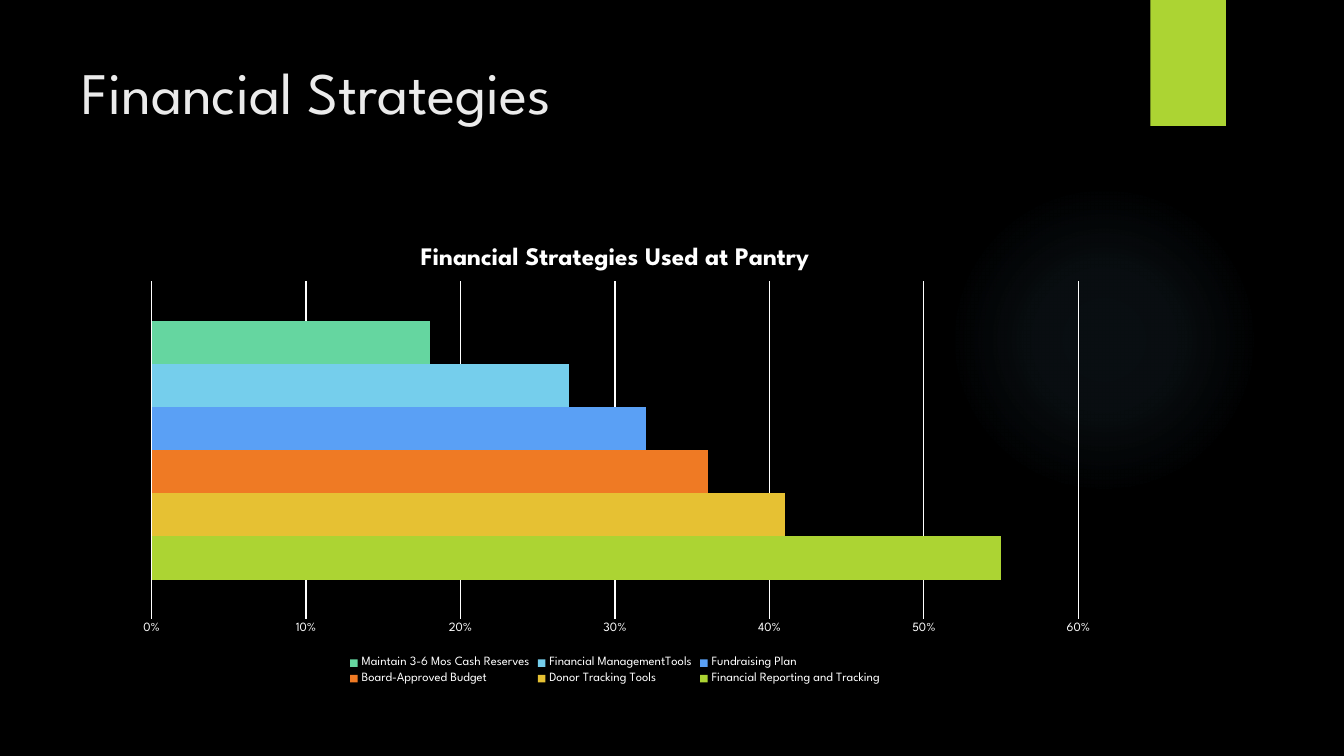
from dataclasses import dataclass

import lxml.etree
import pptx
import pptx.chart.data
import pptx.dml.color
import pptx.enum.chart
import pptx.enum.shapes
import pptx.enum.text
import pptx.oxml
import pptx.oxml.ns
import pptx.util

Inches = pptx.util.Inches
Pt = pptx.util.Pt
qn = pptx.oxml.ns.qn


@dataclass(frozen=True)
class Theme:
    """Colours, font and type sizes of the slide."""
    font: str = "League Spartan"
    background: str = "000000"
    accent: str = "ACD433"
    glow: str = "7AC4F0"
    heading: str = "EBEBEB"
    text: str = "FFFFFF"
    title_size: int = 42
    chart_title_size: int = 18
    chart_size: int = 10
    label_size: int = 9


THEME = Theme()
STRATEGIES = [
    ("Financial Reporting and Tracking", 0.55, THEME.accent),
    ("Donor Tracking Tools", 0.41, "E6C133"),
    ("Board-Approved Budget", 0.36, "EF7A24"),
    ("Fundraising Plan", 0.32, "5AA0F5"),
    ("Financial ManagementTools", 0.27, "75CEEC"),
    ("Maintain 3-6 Mos Cash Reserves", 0.18, "65D6A0"),
]


def rgb(value):
    """Return a colour from its hex value."""
    return pptx.dml.color.RGBColor.from_string(value)


def style_font(font, size, color=THEME.text, bold=False):
    """Apply the theme font with a size, colour and weight."""
    font.name = THEME.font
    font.size = Pt(size)
    font.bold = bold
    font.color.rgb = rgb(color)


def add_plain_shape(slide, kind, box, color):
    """Add a filled shape without outline or shadow."""
    sp = slide.shapes.add_shape(kind, *map(Inches, box))
    sp.shadow.inherit = False
    sp.fill.solid()
    sp.fill.fore_color.rgb = rgb(color)
    sp.line.fill.background()
    return sp


def add_glow(slide, box):
    """Add a circle that fades out from its centre."""
    sp = add_plain_shape(slide, pptx.enum.shapes.MSO_SHAPE.OVAL, box, THEME.glow)
    stops = "".join(
        f'<a:gs pos="{pos * 1000}"><a:srgbClr val="{THEME.glow}">'
        f'<a:alpha val="{alpha * 1000}"/></a:srgbClr></a:gs>'
        for pos, alpha in ((0, 7), (36, 6), (69, 0)))
    grad = pptx.oxml.parse_xml(
        f'<a:gradFill {pptx.oxml.ns.nsdecls("a")} rotWithShape="1">'
        f'<a:gsLst>{stops}</a:gsLst><a:path path="circle">'
        '<a:fillToRect l="50000" t="50000" r="50000" b="50000"/>'
        '</a:path></a:gradFill>')
    solid = sp._element.spPr.find(qn("a:solidFill"))
    solid.getparent().replace(solid, grad)


def add_tab(slide, box):
    """Add the accent tab with its soft shadow."""
    sp = add_plain_shape(slide, pptx.enum.shapes.MSO_SHAPE.RECTANGLE, box, THEME.accent)
    effects = sp._element.spPr.find(qn("a:effectLst"))
    effects.append(pptx.oxml.parse_xml(
        f'<a:outerShdw {pptx.oxml.ns.nsdecls("a")} blurRad="{Pt(3)}" '
        f'dist="{Pt(2)}" dir="5400000" rotWithShape="0"><a:srgbClr val="000000">'
        '<a:alpha val="45000"/></a:srgbClr></a:outerShdw>'))


def set_title(slide, box, text):
    """Place and format the slide title."""
    sp = slide.shapes.title
    sp.left, sp.top, sp.width, sp.height = map(Inches, box)
    tf = sp.text_frame
    tf.text = text
    tf.word_wrap = True
    tf.vertical_anchor = pptx.enum.text.MSO_ANCHOR.TOP
    p = tf.paragraphs[0]
    p.alignment = pptx.enum.text.PP_ALIGN.LEFT
    style_font(p.font, THEME.title_size, THEME.heading)


def set_plot_layout(chart, x, y, w, h):
    """Fix the inner plot area as fractions of the chart."""
    area = chart._chartSpace.chart.plotArea
    for old in area.findall(qn("c:layout")):
        area.remove(old)
    layout = lxml.etree.Element(qn("c:layout"))
    manual = lxml.etree.SubElement(layout, qn("c:manualLayout"))
    for tag, val in (("layoutTarget", "inner"), ("xMode", "edge"), ("yMode", "edge"),
                     ("x", x), ("y", y), ("w", w), ("h", h)):
        lxml.etree.SubElement(manual, qn(f"c:{tag}")).set("val", str(val))
    area.insert(0, layout)


def add_strategy_chart(slide, box, title):
    """Add the bar chart with one series per strategy."""
    data = pptx.chart.data.CategoryChartData(number_format="0%")
    data.categories = ["1"]
    for name, share, _ in STRATEGIES:
        data.add_series(name, [share])
    chart = slide.shapes.add_chart(
        pptx.enum.chart.XL_CHART_TYPE.BAR_CLUSTERED, *map(Inches, box), data).chart
    style_font(chart.font, THEME.chart_size)

    chart.has_title = True
    tf = chart.chart_title.text_frame
    tf.text = title
    style_font(tf.paragraphs[0].font, THEME.chart_title_size, bold=True)
    chart.chart_title.include_in_layout = False

    chart.has_legend = True
    chart.legend.position = pptx.enum.chart.XL_LEGEND_POSITION.BOTTOM
    chart.legend.include_in_layout = False
    style_font(chart.legend.font, THEME.label_size)

    plot = chart.plots[0]
    plot.gap_width = 182
    plot.overlap = 0
    plot.vary_by_categories = False
    for series, (_, _, color) in zip(plot.series, STRATEGIES):
        series.format.fill.solid()
        series.format.fill.fore_color.rgb = rgb(color)

    chart.category_axis.visible = False
    axis = chart.value_axis
    axis.minimum_scale, axis.maximum_scale, axis.major_unit = 0, 0.6, 0.1
    axis.major_tick_mark = pptx.enum.chart.XL_TICK_MARK.NONE
    axis.format.line.fill.background()
    axis.has_major_gridlines = True
    grid = axis.major_gridlines.format.line
    grid.color.rgb = rgb(THEME.text)
    grid.width = Pt(0.75)
    axis.tick_labels.number_format = "0%"
    axis.tick_labels.number_format_is_linked = False
    style_font(axis.tick_labels.font, THEME.label_size)
    set_plot_layout(chart, 0.03, 0.12, 0.94, 0.73)


def build_slide(prs):
    """Build the financial strategies slide."""
    slide = prs.slides.add_slide(prs.slide_layouts[5])
    slide.background.fill.solid()
    slide.background.fill.fore_color.rgb = rgb(THEME.background)
    add_glow(slide, (9.41, 1.83, 3.08, 3.08))
    add_tab(slide, (11.41, 0, 0.75, 1.25))
    set_title(slide, (0.71, 0.5, 10.29, 1.53), "Financial Strategies")
    add_strategy_chart(slide, (1.21, 2.24, 9.78, 4.59), "Financial Strategies Used at Pantry")


def main():
    """Create and save the presentation."""
    prs = pptx.Presentation()
    prs.slide_width, prs.slide_height = Inches(13.33), Inches(7.5)
    build_slide(prs)
    prs.save("out.pptx")


if __name__ == "__main__":
    main()
